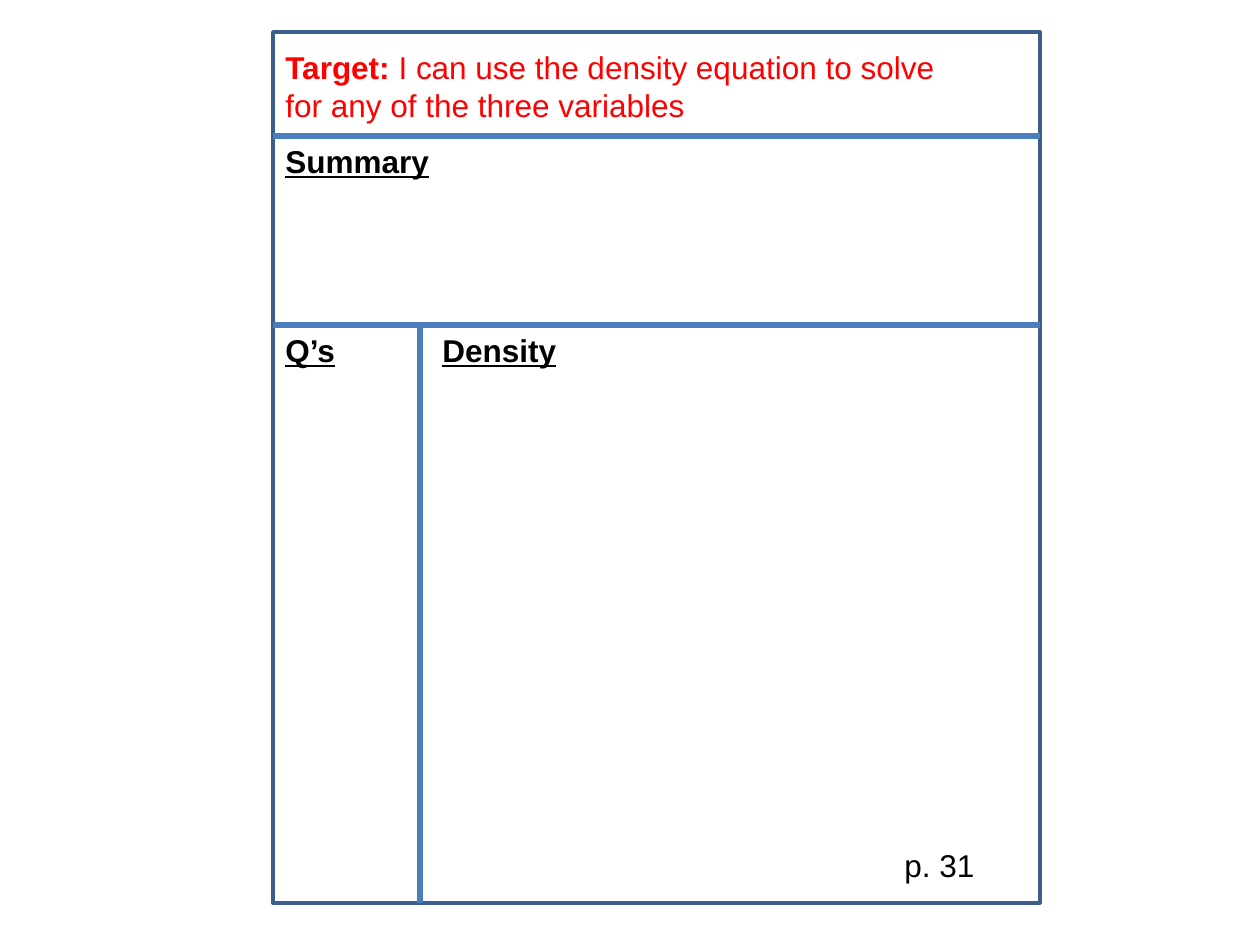
from pptx import Presentation
from pptx.dml.color import RGBColor
from pptx.enum.shapes import MSO_CONNECTOR, MSO_SHAPE
from pptx.enum.text import MSO_AUTO_SIZE
from pptx.oxml.ns import qn
from pptx.util import Emu, Pt
from lxml import etree

RECTANGLE = MSO_SHAPE.RECTANGLE
STRAIGHT = MSO_CONNECTOR.STRAIGHT
GROW_TO_FIT = MSO_AUTO_SIZE.SHAPE_TO_FIT_TEXT

WHITE = RGBColor(0xFF, 0xFF, 0xFF)
BLACK = RGBColor(0x00, 0x00, 0x00)
RED = RGBColor(0xFF, 0x00, 0x00)
FRAME_BLUE = RGBColor(0x3A, 0x5F, 0x8C)
RULE_BLUE = RGBColor(0x4B, 0x7E, 0xBC)

PIXELS_PER_INCH = 126


def px(length):
    return Emu(round(length * 914400 / PIXELS_PER_INCH))


class NotebookPage:
    font_name = "Arial"
    font_size = Pt(18)

    def __init__(self, slide):
        self.slide = slide

    def frame(self, left, top, width, height):
        shape = self.slide.shapes.add_shape(
            RECTANGLE, px(left), px(top), px(width), px(height))
        shape.shadow.inherit = False
        shape.fill.solid()
        shape.fill.fore_color.rgb = WHITE
        shape.line.color.rgb = FRAME_BLUE
        shape.line.width = Pt(2)

    def rule(self, x1, y1, x2, y2):
        connector = self.slide.shapes.add_connector(
            STRAIGHT, px(x1), px(y1), px(x2), px(y2))
        connector.line.color.rgb = RULE_BLUE
        connector.line.width = Pt(3)
        etree.SubElement(connector._element.spPr, qn("a:effectLst"))

    def text(self, left, top, width, height, runs, color=BLACK):
        """Each run is (wording, bold, underline)."""
        box = self.slide.shapes.add_textbox(
            px(left), px(top), px(width), px(height))
        frame = box.text_frame
        frame.word_wrap = True
        frame.auto_size = GROW_TO_FIT
        paragraph = frame.paragraphs[0]
        for wording, bold, underline in runs:
            run = paragraph.add_run()
            run.text = wording
            run.font.name = self.font_name
            run.font.size = self.font_size
            run.font.bold = bold
            run.font.underline = underline
            run.font.color.rgb = color

    def heading(self, left, top, width, wording):
        self.text(left, top, width, 50, [(wording, True, True)])


def main():
    presentation = Presentation()
    presentation.slide_width = px(1260)
    presentation.slide_height = px(945)
    page = NotebookPage(
        presentation.slides.add_slide(presentation.slide_layouts[6]))

    left, top, right, bottom = 273, 32, 1040, 903
    summary_top, notes_top, notes_left = 136, 325, 420

    # Page frame and dividers
    page.frame(left, top, right - left, bottom - top)
    for y in (summary_top, notes_top):
        page.rule(left, y, right, y)
    page.rule(notes_left, notes_top, notes_left, bottom)

    # Learning target
    page.text(left, 42, 714, 89, [
        ("Target:", True, False),
        (" I can use the density equation to solve for any of the three "
         "variables", False, False),
    ], RED)

    # Section headings
    page.heading(left, summary_top, 210, "Summary")
    page.heading(left, notes_top, notes_left - left, "Q’s")
    page.heading(430, notes_top, 430, "Density")

    # Page number
    page.text(892, 840, 116, 50, [("p. 31", False, False)])

    presentation.save("out.pptx")


if __name__ == "__main__":
    main()
